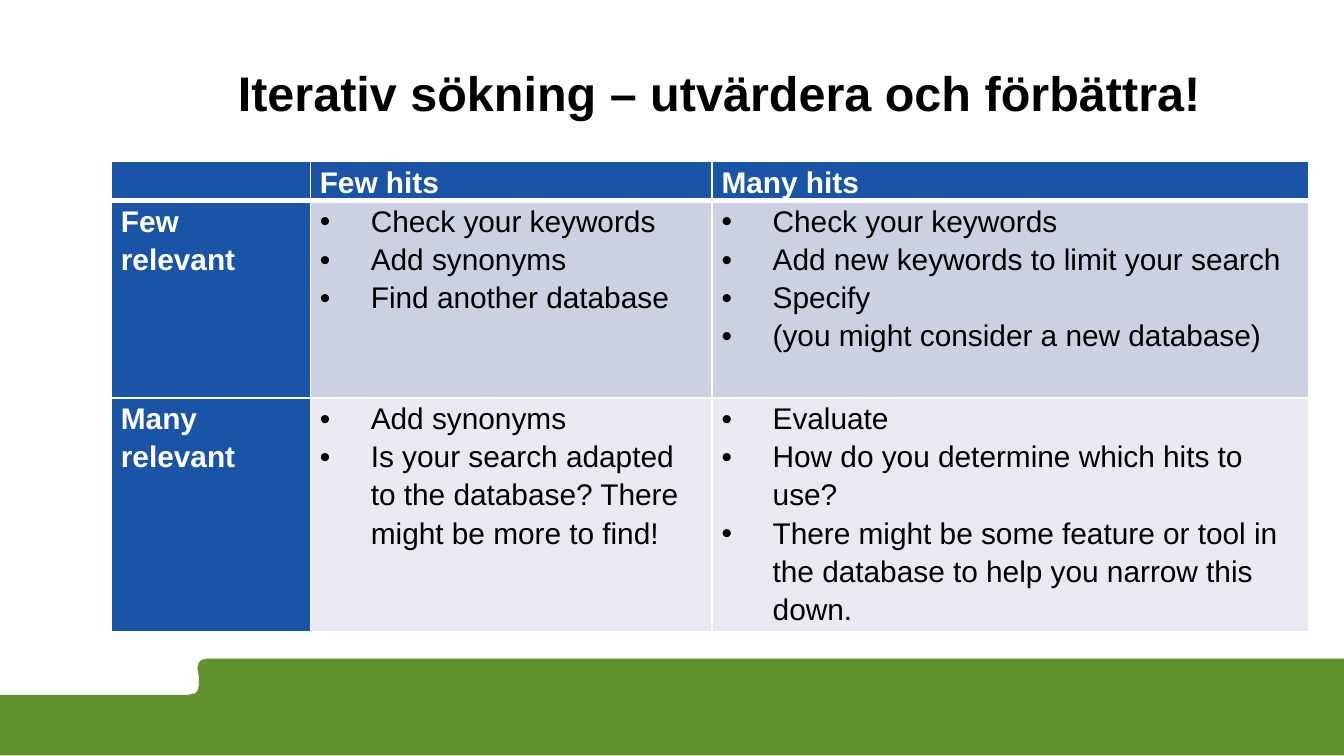
from dataclasses import dataclass

from lxml import etree
from pptx import Presentation
from pptx.dml.color import RGBColor
from pptx.enum import text
from pptx.oxml.ns import qn
from pptx.util import Inches, Pt


@dataclass(frozen=True)
class Theme:
    font: str = "Arial"
    title_size: int = 26
    body_size: int = 16
    black: str = "000000"
    white: str = "FFFFFF"
    blue: str = "1954A6"
    green: str = "62922E"
    bands: tuple = ("CCD1E1", "E8E9F1")


THEME = Theme()
COLUMNS = (1.48, 2.99, 4.44)
ROWS = (0.29, 1.47, 1.74)
HEADINGS = ("", "Few hits", "Many hits")
ADVICE = (
    ("Few relevant",
     ("Check your keywords", "Add synonyms", "Find another database"),
     ("Check your keywords", "Add new keywords to limit your search",
      "Specify", "(you might consider a new database)")),
    ("Many relevant",
     ("Add synonyms",
      "Is your search adapted to the database? There might be more to find!"),
     ("Evaluate", "How do you determine which hits to use?",
      "There might be some feature or tool in the database "
      "to help you narrow this down.")),
)
BAND_OUTLINE = (
    (1.54, 4.9), (10, 4.9), (10, 5.62), (0, 5.62), (0, 5.17), (1.4, 5.17),
    (1.45, 5.16), (1.47, 5.14), (1.48, 5.1), (1.48, 5.04), (1.47, 4.97),
    (1.48, 4.93), (1.5, 4.91),
)


def add_run(p, content, size, color, bold):
    r = p.add_run()
    r.text = content
    r.font.name = THEME.font
    r.font.size = Pt(size)
    r.font.bold = bold
    r.font.color.rgb = RGBColor.from_string(color)


def add_footer_band(s):
    points = [(Inches(x), Inches(y)) for x, y in BAND_OUTLINE]
    builder = s.shapes.build_freeform(*points[0])
    builder.add_line_segments(points[1:], close=True)
    sp = builder.convert_to_shape()
    sp.shadow.inherit = False
    sp.fill.solid()
    sp.fill.fore_color.rgb = RGBColor.from_string(THEME.green)
    sp.line.fill.background()


def set_title(s, content):
    sp = s.shapes.title
    sp.left, sp.top = Inches(1.77), Inches(0.35)
    sp.width, sp.height = Inches(7.59), Inches(0.55)
    tf = sp.text_frame
    tf.word_wrap = True
    tf.auto_size = text.MSO_AUTO_SIZE.NONE
    tf.vertical_anchor = text.MSO_ANCHOR.BOTTOM
    tf.margin_left = tf.margin_right = tf.margin_top = tf.margin_bottom = 0
    p = tf.paragraphs[0]
    p.alignment = text.PP_ALIGN.LEFT
    p.line_spacing = Pt(30)
    add_run(p, content, THEME.title_size, THEME.black, True)


def add_bullet(p):
    pPr = p._p.get_or_add_pPr()
    pPr.set("marL", str(Inches(0.38)))
    pPr.set("indent", str(-Inches(0.38)))
    etree.SubElement(pPr, qn("a:buFont"), typeface=THEME.font)
    etree.SubElement(pPr, qn("a:buChar"), char="•")


def set_borders(cell, widths):
    tcPr = cell._tc.get_or_add_tcPr()
    for side, width in widths.items():
        ln = etree.SubElement(tcPr, qn(f"a:ln{side}"), w=str(Pt(width)))
        fill = etree.SubElement(ln, qn("a:solidFill"))
        etree.SubElement(fill, qn("a:srgbClr"), val=THEME.white)


def set_empty_size(p, size):
    etree.SubElement(p._p, qn("a:endParaRPr"), sz=str(size * 100))


def fill_cell(cell, lines, fill, color, bold=False, bullets=False, top=1, bottom=1):
    cell.margin_left = cell.margin_right = Inches(0.07)
    cell.margin_top = cell.margin_bottom = 0
    set_borders(cell, {"L": 1, "R": 1, "T": top, "B": bottom})
    cell.fill.solid()
    cell.fill.fore_color.rgb = RGBColor.from_string(fill)
    tf = cell.text_frame
    if not lines:
        set_empty_size(tf.paragraphs[0], THEME.body_size)
    for i, line in enumerate(lines):
        p = tf.add_paragraph() if i else tf.paragraphs[0]
        p.line_spacing = 1.15
        if bullets:
            add_bullet(p)
        add_run(p, line, THEME.body_size, color, bold)


def add_advice_table(s):
    frame = s.shapes.add_table(len(ROWS), len(COLUMNS), Inches(0.83), Inches(1.2),
                               Inches(sum(COLUMNS)), Inches(sum(ROWS)))
    table = frame.table
    for column, width in zip(table.columns, COLUMNS):
        column.width = Inches(width)
    for row, height in zip(table.rows, ROWS):
        row.height = Inches(height)
    for j, heading in enumerate(HEADINGS):
        fill_cell(table.cell(0, j), [heading] if heading else [],
                  THEME.blue, THEME.white, bold=True, bottom=3)
    for i, (label, *tips) in enumerate(ADVICE, start=1):
        top = 3 if i == 1 else 1
        fill_cell(table.cell(i, 0), [label], THEME.blue, THEME.white, bold=True, top=top)
        for j, lines in enumerate(tips, start=1):
            fill_cell(table.cell(i, j), lines, THEME.bands[i - 1], THEME.black,
                      bullets=True, top=top)


def main():
    prs = Presentation()
    prs.slide_width = Inches(10)
    prs.slide_height = prs.slide_width * 9 // 16
    s = prs.slides.add_slide(prs.slide_layouts[5])
    add_footer_band(s)
    set_title(s, "Iterativ sökning – utvärdera och förbättra!")
    add_advice_table(s)
    prs.save("out.pptx")


if __name__ == "__main__":
    main()
